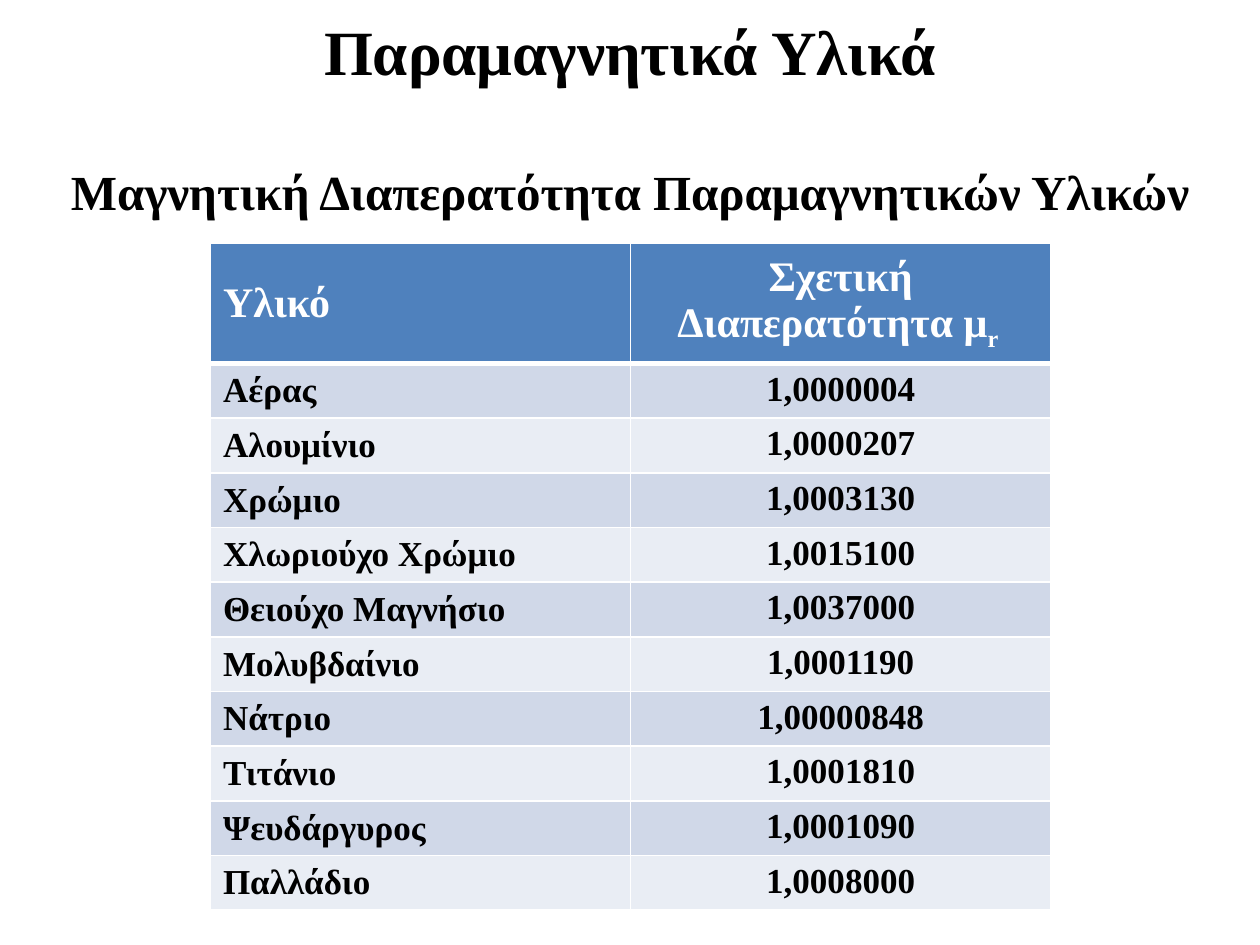
from lxml import etree
from pptx import Presentation
from pptx.dml.color import RGBColor
from pptx.enum import text as t
from pptx.oxml.ns import qn
from pptx.util import Inches, Pt

TITLE = "Παραμαγνητικά Υλικά"
SUBTITLE = "Μαγνητική Διαπερατότητα Παραμαγνητικών Υλικών"
HEADER = ("Υλικό", "Σχετική Διαπερατότητα μ")
SUBSCRIPT = "r "
MATERIALS = [
    ("Αέρας", "1,0000004"),
    ("Αλουμίνιο", "1,0000207"),
    ("Χρώμιο", "1,0003130"),
    ("Χλωριούχο Χρώμιο", "1,0015100"),
    ("Θειούχο Μαγνήσιο", "1,0037000"),
    ("Μολυβδαίνιο", "1,0001190"),
    ("Νάτριο", "1,00000848"),
    ("Τιτάνιο", "1,0001810"),
    ("Ψευδάργυρος", "1,0001090"),
    ("Παλλάδιο", "1,0008000"),
]
BLACK, WHITE, BLUE = "000000", "FFFFFF", "4F81BD"
BANDS = ("D0D8E8", "E9EDF4")
TABLE_HEIGHT, HEADER_HEIGHT = 5.29, 0.95


def color(code):
    return RGBColor.from_string(code)


def write(paragraph, content, size=20, ink=BLACK, align=t.PP_ALIGN.CENTER, baseline=None):
    paragraph.alignment = align
    run = paragraph.add_run()
    run.text = content
    run.font.name = "Times New Roman"
    run.font.size = Pt(size)
    run.font.bold = True
    run.font.color.rgb = color(ink)
    if baseline is not None:
        run.font._element.set("baseline", str(baseline))


def add_heading(slide, content, top, height, size):
    heading = slide.shapes.add_textbox(0, Inches(top), Inches(10), Inches(height))
    heading.text_frame.word_wrap = True
    heading.text_frame.auto_size = t.MSO_AUTO_SIZE.SHAPE_TO_FIT_TEXT
    write(heading.text_frame.paragraphs[0], content, size=size)


def style_cell(cell, fill, top, bottom):
    properties = cell._tc.get_or_add_tcPr()
    for side, width in (("L", 1), ("R", 1), ("T", top), ("B", bottom)):
        line = etree.SubElement(properties, qn("a:ln" + side), w=str(Pt(width)))
        paint = etree.SubElement(line, qn("a:solidFill"))
        etree.SubElement(paint, qn("a:srgbClr"), val=WHITE)
    cell.fill.solid()
    cell.fill.fore_color.rgb = color(fill)


def add_materials_table(slide):
    rows = [HEADER] + MATERIALS
    table = slide.shapes.add_table(
        len(rows), len(HEADER), Inches(1.67), Inches(1.93), Inches(6.67), Inches(TABLE_HEIGHT)
    ).table
    row_height = (TABLE_HEIGHT - HEADER_HEIGHT) / len(MATERIALS)
    for r, row in enumerate(rows):
        is_header = r == 0
        table.rows[r].height = Inches(HEADER_HEIGHT if is_header else row_height)
        fill = BLUE if is_header else BANDS[(r - 1) % 2]
        look = {"size": 24, "ink": WHITE} if is_header else {}
        for c, content in enumerate(row):
            cell = table.cell(r, c)
            style_cell(cell, fill, 3 if r == 1 else 1, 3 if is_header else 1)
            if is_header or c == 0:
                cell.vertical_anchor = t.MSO_ANCHOR.MIDDLE
            align = t.PP_ALIGN.CENTER if c else t.PP_ALIGN.LEFT
            write(cell.text_frame.paragraphs[0], content, align=align, **look)
    write(table.cell(0, 1).text_frame.paragraphs[0], SUBSCRIPT, size=24, ink=WHITE, baseline=-25000)


def main():
    deck = Presentation()
    deck.slide_width, deck.slide_height = Inches(10), Inches(7.5)
    slide = deck.slides.add_slide(deck.slide_layouts[6])
    add_heading(slide, SUBTITLE, 1.23, 0.57, 28)
    add_materials_table(slide)
    add_heading(slide, TITLE, 0.05, 0.71, 36)
    deck.save("out.pptx")


if __name__ == "__main__":
    main()
